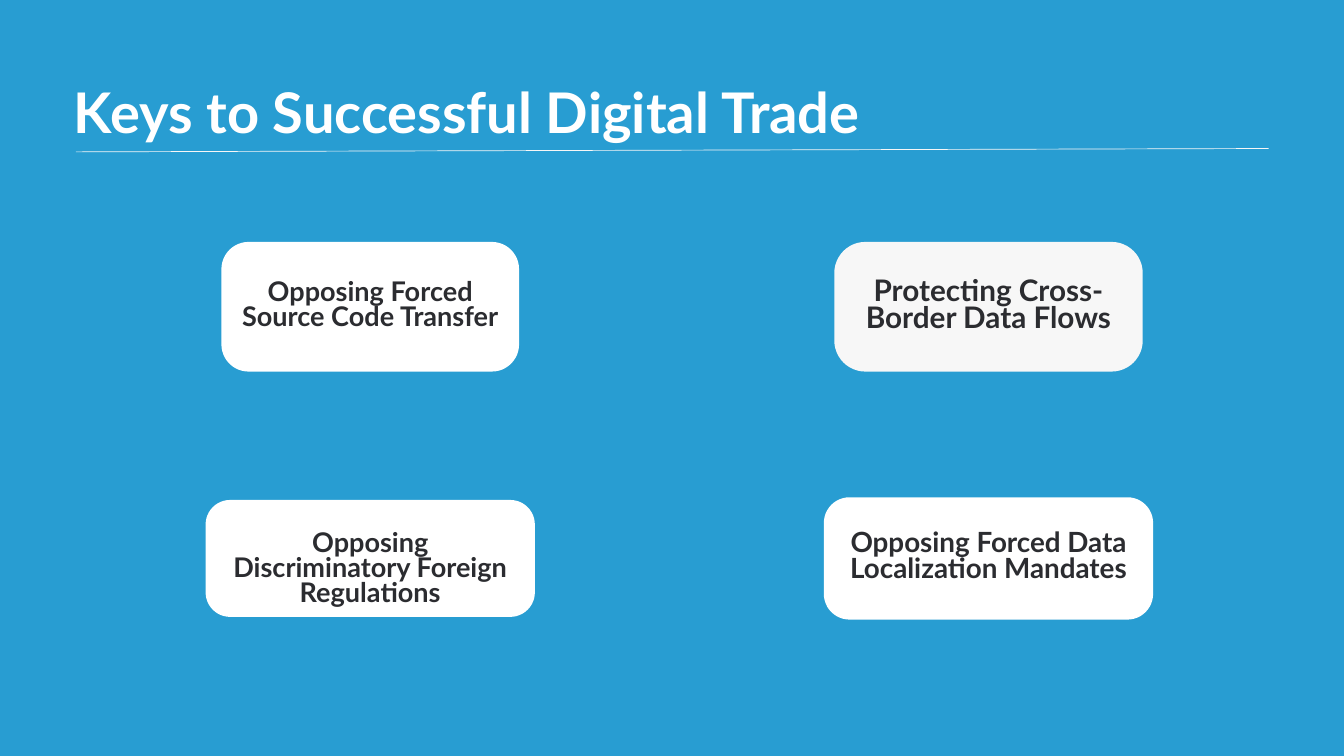
from pptx import Presentation
from pptx.dml.color import RGBColor
from pptx.enum.shapes import MSO_CONNECTOR, MSO_SHAPE
from pptx.enum.text import MSO_AUTO_SIZE, PP_ALIGN
from pptx.oxml.ns import qn
from pptx.util import Inches, Pt
from lxml import etree

STRAIGHT = MSO_CONNECTOR.STRAIGHT
ROUNDED = MSO_SHAPE.ROUNDED_RECTANGLE
GROW = MSO_AUTO_SIZE.SHAPE_TO_FIT_TEXT
LEFT, CENTER = PP_ALIGN.LEFT, PP_ALIGN.CENTER

WIDTH, HEIGHT = Inches(20), Inches(11.25)
COLUMNS, ROWS = 20, 11.25
BLUE, WHITE, PALE, INK = "289DD2", "FFFFFF", "F7F7F7", "2B2C30"
LEFT_CENTER, RIGHT_CENTER = 5.51, 14.71

# center, top, width, height, corner, fill, text top, text width, text height, size, spacing, text
CARDS = [
    (RIGHT_CENTER, 3.6, 4.59, 1.93, 0.24, PALE, 4.18, 3.86, 0.86, 31.8, 28.9,
     "Protecting Cross-Border Data Flows"),
    (RIGHT_CENTER, 7.4, 4.9, 1.82, 0.21, WHITE, 7.93, 4.57, 0.82, 29.8, 27.2,
     "Opposing Forced Data Localization Mandates"),
    (LEFT_CENTER, 3.6, 4.43, 1.93, 0.21, WHITE, 4.2, 4.11, 0.79, 29, 26.4,
     "Opposing Forced Source Code Transfer"),
    (LEFT_CENTER, 7.44, 4.9, 1.74, 0.21, WHITE, 7.94, 4.41, 0.79, 29, 26.4,
     "Opposing Discriminatory Foreign Regulations"),
]


def color(value):
    """Turn a hex string into a colour."""
    return RGBColor.from_string(value)


class SlideBuilder:
    """Hold the style and the current slide."""

    font = {"name": "Lato", "bold": True}
    frame = {"word_wrap": True, "auto_size": GROW, "margin_left": 0,
             "margin_right": 0, "margin_top": 0, "margin_bottom": 0}

    def __init__(self, slide, background):
        """Take a slide and paint its background."""
        self.slide = slide
        slide.background.fill.solid()
        slide.background.fill.fore_color.rgb = color(background)

    def place(self, column, row):
        """Convert a grid position or size to slide lengths."""
        return int(WIDTH * column / COLUMNS), int(HEIGHT * row / ROWS)

    def apply(self, target, values):
        """Set every format value on the target."""
        for name, value in values.items():
            setattr(target, name, value)

    def rule(self, start, end, line_color, weight):
        """Draw a straight line without a shadow."""
        line = self.slide.shapes.add_connector(
            STRAIGHT, *self.place(*start), *self.place(*end))
        line.line.color.rgb = color(line_color)
        line.line.width = Pt(weight)
        etree.SubElement(line._element.spPr, qn("a:effectLst"))

    def panel(self, column, row, width, height, corner, fill):
        """Draw a filled rounded rectangle."""
        shape = self.slide.shapes.add_shape(
            ROUNDED, *self.place(column, row), *self.place(width, height))
        shape.adjustments[0] = corner
        shape.shadow.inherit = False
        shape.fill.solid()
        shape.fill.fore_color.rgb = color(fill)
        shape.line.fill.background()

    def text(self, column, row, width, height, words, size, spacing, ink, alignment):
        """Write one paragraph in a text box."""
        box = self.slide.shapes.add_textbox(
            *self.place(column, row), *self.place(width, height))
        self.apply(box.text_frame, self.frame)
        paragraph = box.text_frame.paragraphs[0]
        self.apply(paragraph, {"alignment": alignment, "line_spacing": Pt(spacing)})
        run = paragraph.add_run()
        run.text = words
        self.apply(run.font, {**self.font, "size": Pt(size)})
        run.font.color.rgb = color(ink)

    def card(self, center, top, width, height, corner, fill,
             text_top, text_width, text_height, size, spacing, words):
        """Draw a panel with a label centred on the same axis."""
        self.panel(center - width / 2, top, width, height, corner, fill)
        self.text(center - text_width / 2, text_top, text_width, text_height,
                  words, size, spacing, INK, CENTER)


def main():
    """Build and save the slide."""
    presentation = Presentation()
    presentation.slide_width, presentation.slide_height = WIDTH, HEIGHT
    slide = presentation.slides.add_slide(presentation.slide_layouts[6])
    builder = SlideBuilder(slide, BLUE)
    builder.rule((1.13, 2.26), (18.88, 2.21), PALE, 0.75)
    builder.text(1.1, 0.98, 17.75, 1.15, "Keys to Successful Digital Trade",
                 60, 84, WHITE, LEFT)
    for card in CARDS:
        builder.card(*card)
    presentation.save("out.pptx")


if __name__ == "__main__":
    main()
